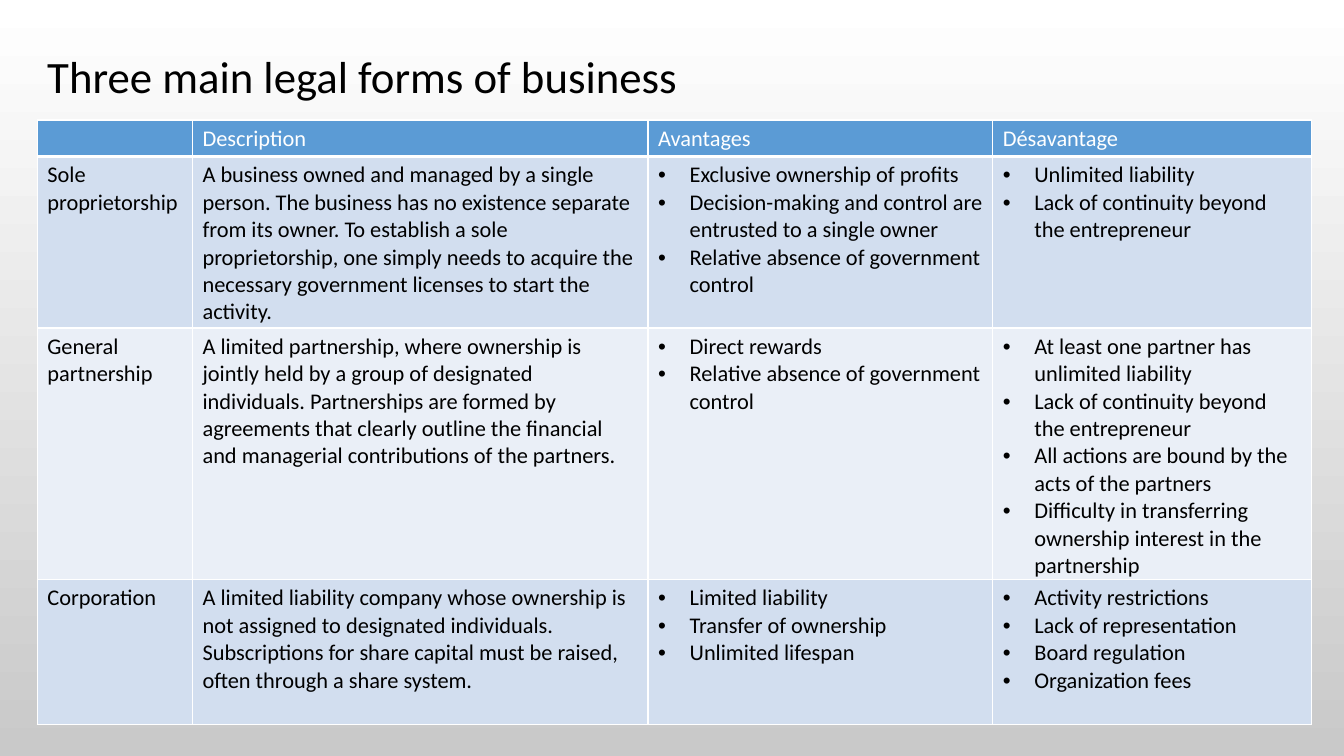
from lxml.etree import SubElement
from pptx import Presentation
from pptx.dml.color import RGBColor
from pptx.enum.text import MSO_AUTO_SIZE
from pptx.oxml.ns import qn
from pptx.util import Pt

COLUMN_WIDTHS = [110.88, 325.44, 246.24, 227.52]
ROW_HEIGHTS = [26.1, 122.5, 179.7, 103.7]
HEADER_FILL, BAND_FILLS = "5B9BD5", ["D2DEEF", "EAEFF7"]
BULLET_INDENT = Pt(22.5)
HEADINGS = ["", "Description", "Avantages", "Désavantage"]
LEGAL_FORMS = [
    ["Sole proprietorship",
     "A business owned and managed by a single person. The business has no existence "
     "separate from its owner. To establish a sole proprietorship, one simply needs to "
     "acquire the necessary government licenses to start the activity.",
     ["Exclusive ownership of profits",
      "Decision-making and control are entrusted to a single owner",
      "Relative absence of government control"],
     ["Unlimited liability", "Lack of continuity beyond the entrepreneur"]],
    ["General partnership",
     "A limited partnership, where ownership is jointly held by a group of designated "
     "individuals. Partnerships are formed by agreements that clearly outline the "
     "financial and managerial contributions of the partners.",
     ["Direct rewards", "Relative absence of government control"],
     ["At least one partner has unlimited liability",
      "Lack of continuity beyond the entrepreneur",
      "All actions are bound by the acts of the partners",
      "Difficulty in transferring ownership interest in the partnership"]],
    ["Corporation",
     "A limited liability company whose ownership is not assigned to designated "
     "individuals. Subscriptions for share capital must be raised, often through a "
     "share system.",
     ["Limited liability", "Transfer of ownership", "Unlimited lifespan"],
     ["Activity restrictions", "Lack of representation", "Board regulation",
      "Organization fees"]],
]


def color(value):
    return RGBColor.from_string(value)


def set_values(target, values):
    for name, value in values.items():
        setattr(target, name, value)


def write(para, text, size, ink):
    span = para.add_run()
    span.text = text
    set_values(span.font, {"name": "Calibri", "size": Pt(size), "bold": False})
    span.font.color.rgb = color(ink)


def add_bullet(para):
    properties = para._p.get_or_add_pPr()
    properties.set("marL", str(BULLET_INDENT))
    properties.set("indent", str(-BULLET_INDENT))
    SubElement(properties, qn("a:buFont")).set("typeface", "Arial")
    SubElement(properties, qn("a:buChar")).set("char", "•")


def add_borders(cell, bottom_width):
    properties = cell._tc.get_or_add_tcPr()
    widths = {"a:lnL": 1, "a:lnR": 1, "a:lnT": 1, "a:lnB": bottom_width}
    for position, (side, width) in enumerate(widths.items()):
        line = properties.makeelement(qn(side), {"w": str(Pt(width))})
        SubElement(SubElement(line, qn("a:solidFill")), qn("a:srgbClr")).set("val", "FFFFFF")
        properties.insert(position, line)


def fill_cell(cell, content, fill, ink, bottom_width):
    cell.fill.solid()
    cell.fill.fore_color.rgb = color(fill)
    set_values(cell, {"margin_left": Pt(7.2), "margin_right": Pt(7.2),
                      "margin_top": Pt(3.6), "margin_bottom": Pt(0)})
    add_borders(cell, bottom_width)
    bulleted = isinstance(content, list)
    for number, text in enumerate(content if bulleted else [content]):
        para = cell.text_frame.add_paragraph() if number else cell.text_frame.paragraphs[0]
        if bulleted:
            add_bullet(para)
        if text:
            write(para, text, 16, ink)


def add_background(page):
    fill = page.background.fill
    fill.gradient()
    fill.gradient_angle = 270
    for stop, (position, shade) in zip(fill.gradient_stops, [(0, "FFFFFF"), (1, "C9C9C9")]):
        stop.position = position
        stop.color.rgb = color(shade)


def add_title(page, left, top, width, height):
    box = page.shapes.add_textbox(Pt(left), Pt(top), Pt(width), Pt(height))
    set_values(box.text_frame, {"word_wrap": True,
                                "auto_size": MSO_AUTO_SIZE.SHAPE_TO_FIT_TEXT})
    write(box.text_frame.paragraphs[0], "Three main legal forms of business", 32, "000000")


def add_comparison(page, left, top):
    rows = [HEADINGS] + LEGAL_FORMS
    table = page.shapes.add_table(len(rows), len(HEADINGS), Pt(left), Pt(top),
                                  Pt(sum(COLUMN_WIDTHS)), Pt(sum(ROW_HEIGHTS))).table
    for column, width in zip(table.columns, COLUMN_WIDTHS):
        column.width = Pt(width)
    for row_number, (contents, height) in enumerate(zip(rows, ROW_HEIGHTS)):
        table.rows[row_number].height = Pt(height)
        if row_number:
            look = BAND_FILLS[(row_number - 1) % 2], "000000", 1
        else:
            look = HEADER_FILL, "FFFFFF", 3
        for column_number, content in enumerate(contents):
            fill_cell(table.cell(row_number, column_number), content, *look)


def main():
    deck = Presentation()
    set_values(deck, {"slide_width": Pt(960), "slide_height": Pt(540)})
    page = deck.slides.add_slide(deck.slide_layouts[6])
    add_background(page)
    add_title(page, 26.64, 30.96, 720.72, 46.08)
    add_comparison(page, 26.64, 85.68)
    deck.save("out.pptx")


if __name__ == "__main__":
    main()
